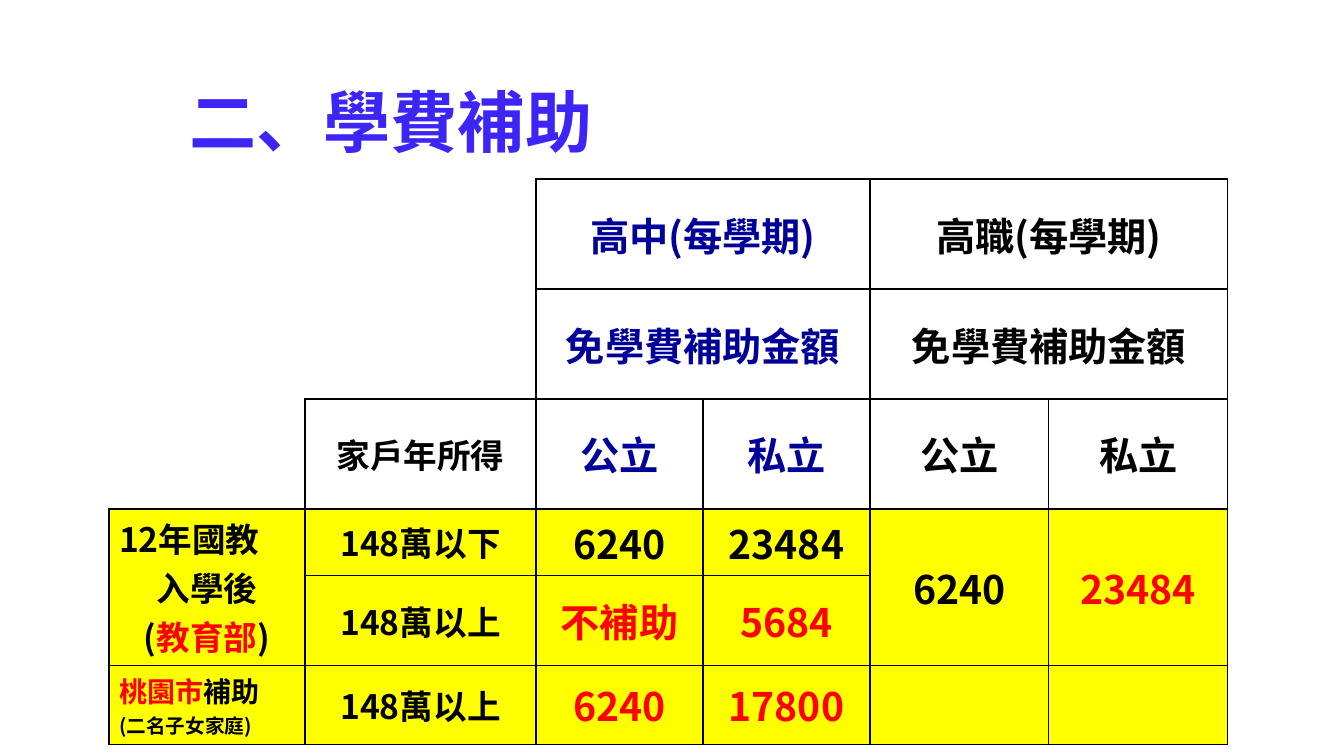
from lxml import etree
from pptx import Presentation
from pptx.dml.color import RGBColor
from pptx.enum.text import MSO_ANCHOR, MSO_AUTO_SIZE, PP_ALIGN
from pptx.oxml.ns import qn
from pptx.util import Pt

EMU_PER_PX = 914400 / 100.8
FONT = "Noto Sans CJK SC"
BLACK, NAVY, RED, YELLOW, VIOLET = "000000", "000099", "FF0000", "FFFF00", "3D25F6"
LEFT, CENTER = PP_ALIGN.LEFT, PP_ALIGN.CENTER
MIDDLE = MSO_ANCHOR.MIDDLE
NO_AUTOFIT = MSO_AUTO_SIZE.NONE

COLUMN_WIDTHS = [196, 231, 167, 167, 179, 179]
ROW_HEIGHTS = [110, 110, 110, 65, 83, 79]
FIRST_FILLED_ROW = 3
SIDES = {"left": "a:lnL", "right": "a:lnR", "top": "a:lnT", "bottom": "a:lnB"}
CORNER_BORDERS = {
    (0, 0): [], (0, 1): ["right"],
    (1, 0): [], (1, 1): ["right", "bottom"],
    (2, 0): ["right", "bottom"],
}
MERGES = [
    (0, 2, 0, 3), (0, 4, 0, 5), (1, 2, 1, 3), (1, 4, 1, 5),
    (3, 0, 4, 0), (3, 4, 4, 4), (3, 5, 4, 5),
]
# One-line cells: row, column, text, size, colour
ENTRIES = [
    (0, 2, "高中(每學期)", 28, NAVY),
    (0, 4, "高職(每學期)", 28, BLACK),
    (1, 2, "免學費補助金額", 28, NAVY),
    (1, 4, "免學費補助金額", 28, BLACK),
    (2, 1, "家戶年所得", 24, BLACK),
    (2, 2, "公立", 28, NAVY),
    (2, 3, "私立", 28, NAVY),
    (2, 4, "公立", 28, BLACK),
    (2, 5, "私立", 28, BLACK),
    (3, 1, "148萬以下", 24, BLACK),
    (3, 2, "6240", 28, BLACK),
    (3, 3, "23484", 28, BLACK),
    (3, 4, "6240", 28, BLACK),
    (3, 5, "23484", 28, RED),
    (4, 1, "148萬以上", 24, BLACK),
    (4, 2, "不補助", 28, RED),
    (4, 3, "5684", 28, RED),
    (5, 1, "148萬以上", 24, BLACK),
    (5, 2, "6240", 28, RED),
    (5, 3, "17800", 28, RED),
]


def px(length):
    return round(length * EMU_PER_PX)


def rgb(color):
    return RGBColor.from_string(color)


def add_run(paragraph, text, size, color):
    run = paragraph.add_run()
    run.text = text
    run.font.size = Pt(size)
    run.font.bold = True
    run.font.color.rgb = rgb(color)
    run.font.name = FONT
    latin = run.font._element.find(qn("a:latin"))
    east_asian = etree.Element(qn("a:ea"), typeface=FONT)
    latin.addnext(east_asian)
    return run


def add_text_shadow(run):
    effects = etree.Element(qn("a:effectLst"))
    shadow = etree.SubElement(effects, qn("a:outerShdw"), blurRad="38100",
                              dist="38100", dir="2700000", algn="tl")
    color = etree.SubElement(shadow, qn("a:srgbClr"), val=BLACK)
    etree.SubElement(color, qn("a:alpha"), val="43000")
    run.font._element.find(qn("a:solidFill")).addnext(effects)


def set_borders(cell, visible_sides):
    properties = cell._tc.get_or_add_tcPr()
    for position, (side, tag) in enumerate(SIDES.items()):
        line = etree.Element(qn(tag), w=str(Pt(1)))
        if side in visible_sides:
            fill = etree.SubElement(line, qn("a:solidFill"))
            etree.SubElement(fill, qn("a:srgbClr"), val=BLACK)
        else:
            etree.SubElement(line, qn("a:noFill"))
        properties.insert(position, line)


def add_title(slide):
    title = slide.shapes.title
    title.left, title.top, title.width, title.height = map(px, (179, 79, 595, 84))
    frame = title.text_frame
    frame.word_wrap = True
    frame.auto_size = NO_AUTOFIT
    frame.vertical_anchor = MIDDLE
    paragraph = frame.paragraphs[0]
    paragraph.alignment = LEFT
    add_text_shadow(add_run(paragraph, "二、學費補助", 48, VIOLET))


def add_subsidy_table(slide):
    table = slide.shapes.add_table(
        len(ROW_HEIGHTS), len(COLUMN_WIDTHS), px(109), px(179),
        px(sum(COLUMN_WIDTHS)), px(sum(ROW_HEIGHTS))).table
    table.first_row = table.horz_banding = False
    for column, width in zip(table.columns, COLUMN_WIDTHS):
        column.width = px(width)
    for row, height in zip(table.rows, ROW_HEIGHTS):
        row.height = px(height)

    for r in range(len(ROW_HEIGHTS)):
        for c in range(len(COLUMN_WIDTHS)):
            cell = table.cell(r, c)
            cell.vertical_anchor = MIDDLE
            if r >= FIRST_FILLED_ROW:
                cell.fill.solid()
                cell.fill.fore_color.rgb = rgb(YELLOW)
            else:
                cell.fill.background()
            set_borders(cell, CORNER_BORDERS.get((r, c), SIDES))
    for top, left, bottom, right in MERGES:
        table.cell(top, left).merge(table.cell(bottom, right))
    return table


def fill_program_labels(table):
    ministry = table.cell(3, 0).text_frame
    add_run(ministry.paragraphs[0], "12年國教", 24, BLACK)
    after_entry = ministry.add_paragraph()
    after_entry.alignment = CENTER
    add_run(after_entry, "入學後", 24, BLACK)
    after_entry.add_line_break()
    add_run(after_entry, "(", 24, BLACK)
    add_run(after_entry, "教育部", 24, RED)
    add_run(after_entry, ")", 24, BLACK)

    city = table.cell(5, 0).text_frame
    add_run(city.paragraphs[0], "桃園市", 20, RED)
    add_run(city.paragraphs[0], "補助", 20, BLACK)
    add_run(city.add_paragraph(), "(二名子女家庭)", 14, BLACK)


def main():
    presentation = Presentation()
    presentation.slide_width, presentation.slide_height = px(1344), px(756)
    slide = presentation.slides.add_slide(presentation.slide_layouts[5])
    add_title(slide)
    table = add_subsidy_table(slide)
    for row, column, text, size, color in ENTRIES:
        paragraph = table.cell(row, column).text_frame.paragraphs[0]
        paragraph.alignment = CENTER
        add_run(paragraph, text, size, color)
    fill_program_labels(table)
    presentation.save("out.pptx")


if __name__ == "__main__":
    main()
